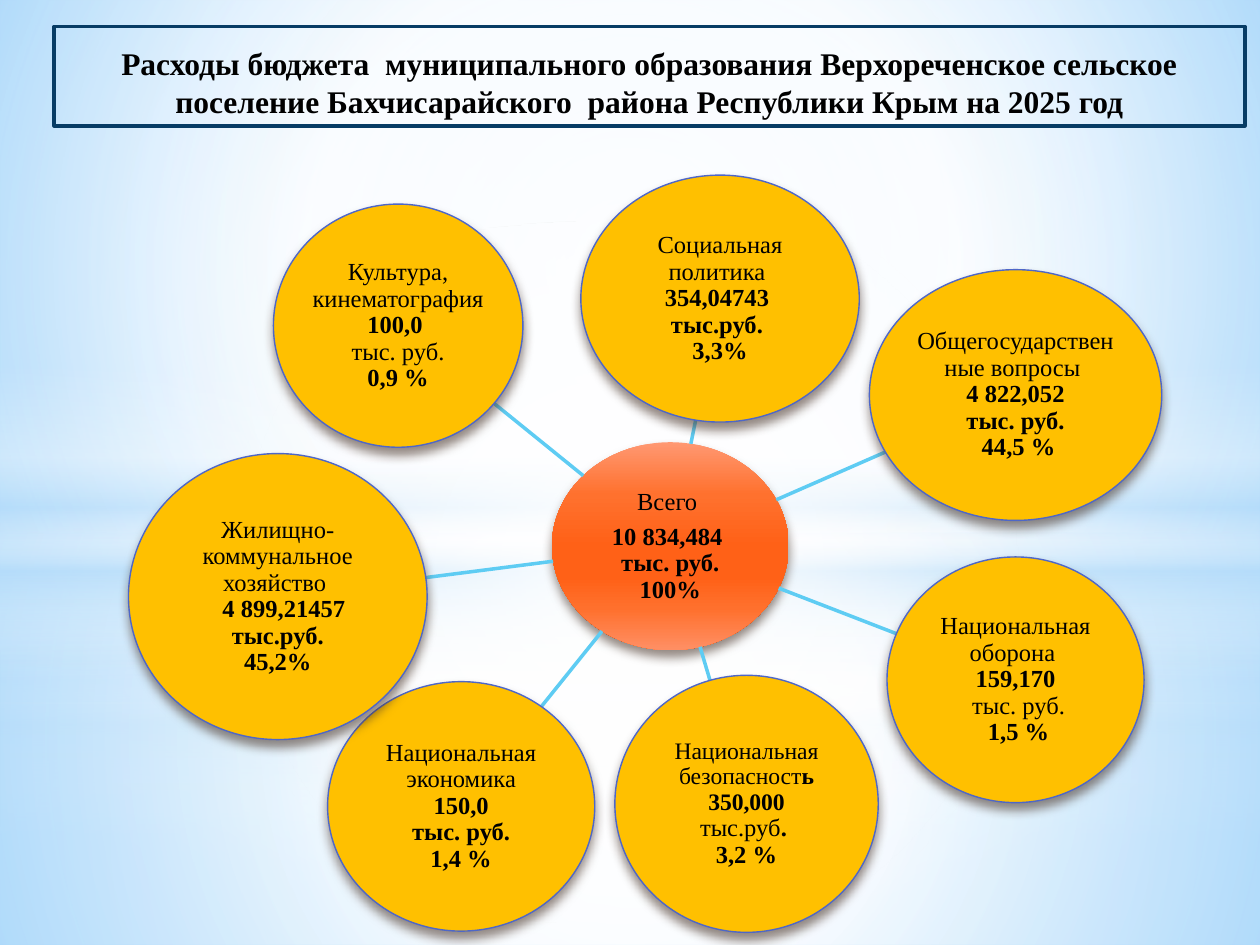
"""Budget spending slide: a hub with the total and one bubble per item."""
from dataclasses import dataclass
from math import hypot

from pptx import Presentation
from pptx import util as u
from pptx.dml.color import RGBColor
from pptx.enum import shapes, text
from pptx.oxml import parse_xml
from pptx.oxml.ns import nsdecls, qn

FONT = "Times New Roman"
CENTRE = (50, 50, 50, 50)
RECT, OVAL = shapes.MSO_SHAPE.RECTANGLE, shapes.MSO_SHAPE.OVAL
WHITE, SKY = "FFFFFF", "B4DCFA"


@dataclass
class Panel:
    kind: shapes.MSO_SHAPE
    top: float
    height: float
    stops: list
    focus: tuple | None = CENTRE


@dataclass
class Bubble:
    left: float
    top: float
    width: float
    height: float
    lines: tuple
    lead_size: float = 14

    @property
    def centre(self) -> tuple[float, float]:
        return self.left + self.width / 2, self.top + self.height / 2

    def edge_towards(self, other: "Bubble") -> tuple[float, float]:
        (x, y), (ox, oy) = self.centre, other.centre
        dx, dy = ox - x, oy - y
        t = 1 / hypot(dx / (self.width / 2), dy / (self.height / 2))
        return x + t * dx, y + t * dy


def glow(inner: int, middle: int, at: int, outer: int) -> list:
    return [(0, WHITE, inner), (at, WHITE, middle), (100, SKY, outer)]


BAND = [(0, WHITE, 0), (29, WHITE, 30), (45, SKY, 40),
        (55, WHITE, 26), (65, SKY, 60), (100, WHITE, 0)]
BACKDROP = [(0, "9ED5FF", 100), (60, WHITE, 100), (100, "5BB9FF", 100)]
HUB_STOPS = [(0, "FF9872", 100), (25, "FF712E", 100), (50, "FF6117", 100),
             (65, "FF6117", 100), (80, "FF702D", 100), (100, "FF8F64", 100)]

PANELS = [
    Panel(RECT, 5.58, 1.92, glow(91, 76, 37, 79)),
    Panel(RECT, 0, 5.58, glow(89, 62, 48, 79)),
    Panel(RECT, 4.12, 2.5, BAND, None),
    Panel(OVAL, 1.75, 5.58, [(0, WHITE, 100), (56, WHITE, 0)]),
    Panel(RECT, 4.23, 3.27, glow(92, 77, 37, 80)),
    Panel(RECT, 0, 4.23, glow(90, 63, 48, 80)),
    Panel(RECT, 2.9, 2.5, BAND, None),
    Panel(OVAL, 1.75, 5.58, [(0, WHITE, 100), (54, WHITE, 0)]),
]

HUB = Bubble(4.38, 3.51, 1.88, 1.65, ("Всего ", "*10 834,484  тыс. руб. 100%"))
ITEMS = [
    Bubble(2.6, 5.41, 2.12, 1.98,
           ("Национальная экономика", "*150,0", " *тыс. руб. ", "*1,4 %")),
    Bubble(7.04, 4.42, 2.04, 1.95,
           ("Национальная оборона ", "*159,170", " тыс. руб.", "* 1,5 %")),
    Bubble(1.02, 3.6, 2.37, 2.27,
           ("Жилищно-коммунальное хозяйство ", "*  4 899,21457", "*тыс.руб.", "*45,2%")),
    Bubble(6.9, 2.14, 2.32, 1.99,
           ("Общегосударственные вопросы ", "*4 822,052", "* тыс. руб. ", "* 44,5 %")),
    Bubble(2.17, 1.62, 1.98, 1.93,
           ("Культура, кинематография", "*100,0 ", "тыс. руб.", "*0,9 %")),
    Bubble(4.61, 1.39, 2.21, 1.96,
           ("Социальная политика ", "*354,04743 ", "*тыс.руб. ", "*3,3%")),
    Bubble(4.88, 5.36, 2.09, 2.04,
           ("Национальная безопасност*ь 350,000", "тыс.руб*. ", "*3,2 %"), 13.5),
]
TITLE = ("*Расходы бюджета  муниципального образования Верхореченское сельское "
         "поселение Бахчисарайского  района Республики Крым на 2025 год")


def rgb(value: str) -> RGBColor:
    return RGBColor.from_string(value)


def paint_gradient(fill, props, stops: list, focus: tuple | None) -> None:
    fill.solid()
    fill.fore_color.rgb = rgb(WHITE)
    marks = "".join(
        f'<a:gs pos="{at * 1000}"><a:srgbClr val="{c}"><a:alpha val="{alpha * 1000}"/>'
        "</a:srgbClr></a:gs>" for at, c, alpha in stops)
    if focus:
        sides = " ".join(f'{k}="{v * 1000}"' for k, v in zip("ltrb", focus))
        way = f'<a:path path="circle"><a:fillToRect {sides}/></a:path>'
    else:
        way = '<a:lin ang="5400000" scaled="0"/>'
    grad = parse_xml(f'<a:gradFill {nsdecls("a")} rotWithShape="1">'
                     f"<a:gsLst>{marks}</a:gsLst>{way}</a:gradFill>")
    props.replace(props.find(qn("a:solidFill")), grad)


def add_plain(s, kind, left: float, top: float, width: float, height: float):
    sp = s.shapes.add_shape(kind, *map(u.Inches, (left, top, width, height)))
    sp.shadow.inherit = False
    sp.line.fill.background()
    return sp


def set_line(line, color: str, width: float) -> None:
    line.color.rgb = rgb(color)
    line.width = u.Pt(width)


def write_line(p, line: str, size: float) -> None:
    """Write one paragraph, switching bold at each asterisk."""
    p.alignment = text.PP_ALIGN.CENTER
    for i, part in enumerate(line.split("*")):
        if part:
            r = p.add_run()
            r.text = part
            r.font.name, r.font.size = FONT, u.Pt(size)
            r.font.bold = i % 2 == 1
            r.font.color.rgb = rgb("000000")


def add_bubble(s, b: Bubble):
    sp = add_plain(s, OVAL, b.left, b.top, b.width, b.height)
    sp._element.spPr.find(qn("a:effectLst")).append(parse_xml(
        f'<a:outerShdw {nsdecls("a")} blurRad="{u.Pt(6)}" dist="{u.Pt(4)}" dir="5400000" '
        'rotWithShape="0"><a:srgbClr val="4E3B30"><a:alpha val="60000"/></a:srgbClr>'
        "</a:outerShdw>"))
    tf = sp.text_frame
    tf.word_wrap = True
    tf.vertical_anchor = text.MSO_ANCHOR.MIDDLE
    tf.margin_left = tf.margin_top = tf.margin_right = tf.margin_bottom = u.Inches(0.01)
    for i, line in enumerate(b.lines):
        p = tf.add_paragraph() if i else tf.paragraphs[0]
        p.line_spacing = 0.9
        write_line(p, line, 14 if i else b.lead_size)
    return sp


def add_spoke(s, b: Bubble) -> None:
    ends = (*HUB.edge_towards(b), *b.edge_towards(HUB))
    cx = s.shapes.add_connector(shapes.MSO_CONNECTOR.STRAIGHT, *map(u.Inches, ends))
    set_line(cx.line, "5ECCF3", 2)
    cx._element.spPr.append(parse_xml(f'<a:effectLst {nsdecls("a")}/>'))


def main() -> None:
    prs = Presentation()
    prs.slide_width, prs.slide_height = u.Inches(10), u.Inches(7.5)
    s = prs.slides.add_slide(prs.slide_layouts[6])

    fill = s.background.fill
    fill.solid()
    paint_gradient(fill, s._element.cSld.bg.bgPr, BACKDROP, (20, 10, 20, 60))
    for panel in PANELS:
        sp = add_plain(s, panel.kind, 0, panel.top, 10, panel.height)
        paint_gradient(sp.fill, sp._element.spPr, panel.stops, panel.focus)

    hub = add_bubble(s, HUB)
    paint_gradient(hub.fill, hub._element.spPr, HUB_STOPS, None)
    hub.text_frame.paragraphs[0].space_after = u.Pt(5)
    for item in ITEMS:
        add_spoke(s, item)
        sp = add_bubble(s, item)
        sp.fill.solid()
        sp.fill.fore_color.rgb = rgb("FFC000")
        set_line(sp.line, "4E67C8", 0.79)

    title = add_plain(s, RECT, 0.43, 0.21, 9.45, 0.79)
    title.fill.background()
    set_line(title.line, "073C65", 2)
    tf = title.text_frame
    tf.word_wrap = True
    tf.vertical_anchor = text.MSO_ANCHOR.BOTTOM
    write_line(tf.paragraphs[0], TITLE, 18)
    prs.save("out.pptx")


if __name__ == "__main__":
    main()
